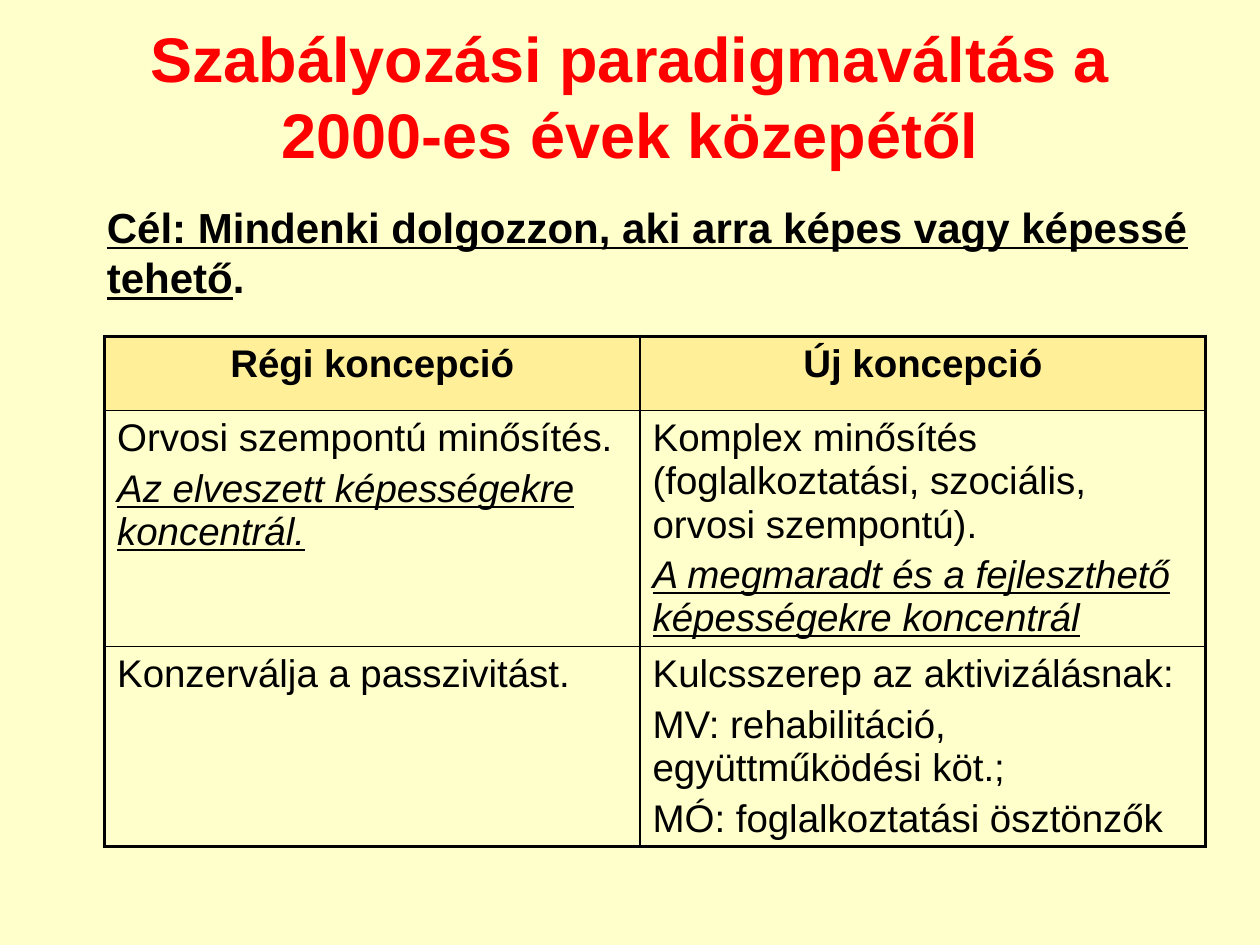
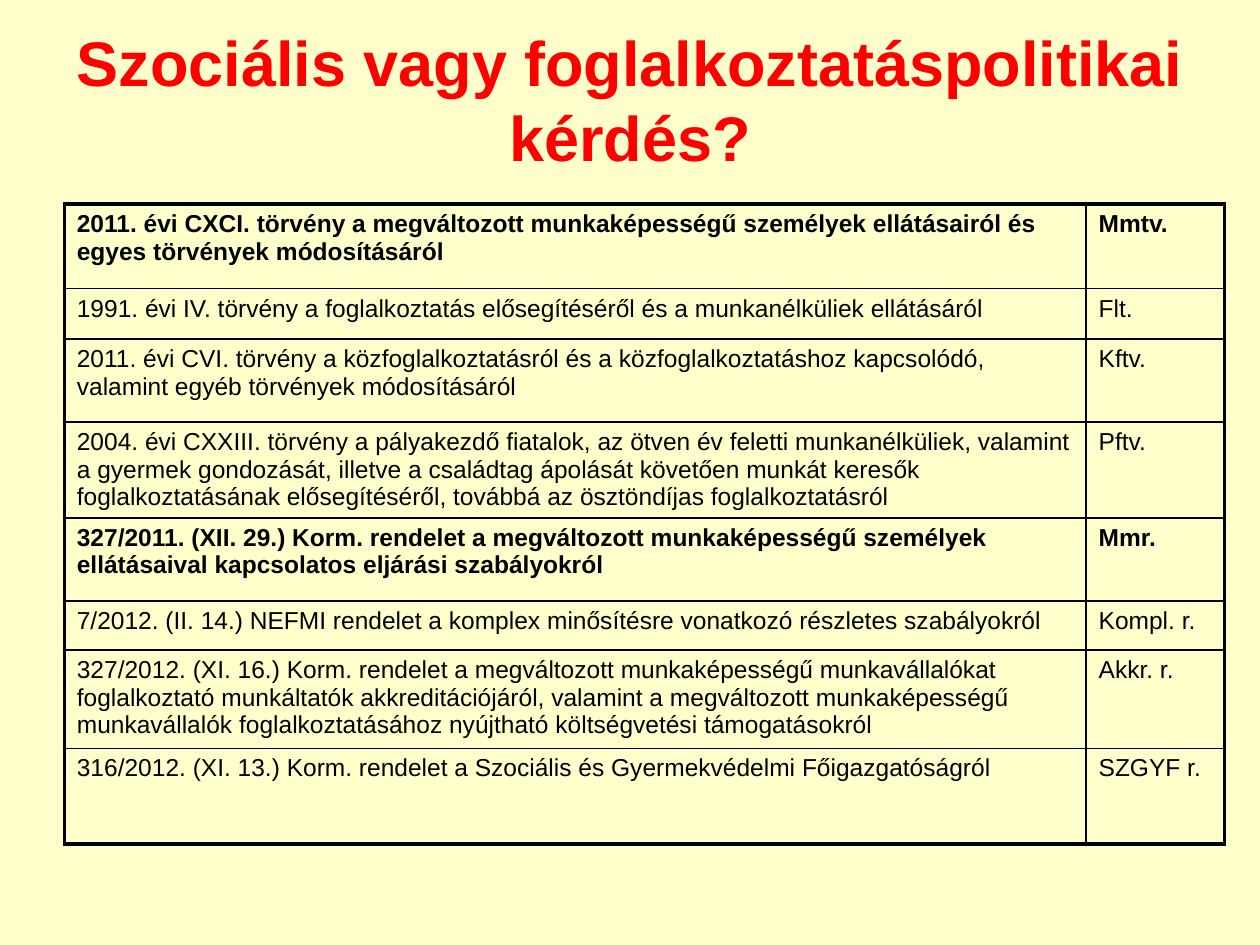
from dataclasses import dataclass

import lxml.etree
import pptx
import pptx.dml.color
import pptx.enum.text
import pptx.oxml.ns
import pptx.util

Inches = pptx.util.Inches
Pt = pptx.util.Pt
PP_ALIGN = pptx.enum.text.PP_ALIGN


@dataclass(frozen=True)
class Theme:
    font: str = "Arial"
    background: str = "FFFFCC"
    title: str = "FF0000"
    ink: str = "000000"
    header: str = "FFC000"
    header_alpha: int = 25
    title_size: int = 36
    goal_size: int = 24
    concept_size: int = 22
    law_size: int = 14
    outer_line: float = 2.25
    inner_line: float = 1


THEME = Theme()

CONCEPTS = [
    [["Régi koncepció"], ["Új koncepció"]],
    [
        ["Orvosi szempontú minősítés.", "Az elveszett képességekre koncentrál."],
        [
            "Komplex minősítés (foglalkoztatási, szociális, orvosi szempontú).",
            "A megmaradt és a fejleszthető képességekre koncentrál",
        ],
    ],
    [
        ["Konzerválja a passzivitást."],
        [
            "Kulcsszerep az aktivizálásnak:",
            "MV: rehabilitáció, együttműködési köt.;",
            "MÓ: foglalkoztatási ösztönzők",
        ],
    ],
]

LAWS = [
    ("2011. évi CXCI. törvény a megváltozott munkaképességű személyek ellátásairól "
     "és egyes törvények módosításáról", "Mmtv.", 0.67),
    ("1991. évi IV. törvény a foglalkoztatás elősegítéséről és a munkanélküliek "
     "ellátásáról", "Flt.", 0.4),
    ("2011. évi CVI. törvény a közfoglalkoztatásról és a közfoglalkoztatáshoz "
     "kapcsolódó, valamint egyéb törvények módosításáról", "Kftv.", 0.66),
    ("2004. évi CXXIII. törvény a pályakezdő fiatalok, az ötven év feletti "
     "munkanélküliek, valamint a gyermek gondozását, illetve a családtag ápolását "
     "követően munkát keresők foglalkoztatásának elősegítéséről, továbbá az "
     "ösztöndíjas foglalkoztatásról", "Pftv.", 0.76),
    ("327/2011. (XII. 29.) Korm. rendelet a megváltozott munkaképességű személyek "
     "ellátásaival kapcsolatos eljárási szabályokról", "Mmr.", 0.66),
    ("7/2012. (II. 14.) NEFMI rendelet a komplex minősítésre vonatkozó részletes "
     "szabályokról", "Kompl. r.", 0.39),
    ("327/2012. (XI. 16.) Korm. rendelet a megváltozott munkaképességű "
     "munkavállalókat foglalkoztató munkáltatók akkreditációjáról, valamint a "
     "megváltozott munkaképességű munkavállalók foglalkoztatásához nyújtható "
     "költségvetési támogatásokról", "Akkr. r.", 0.78),
    ("316/2012. (XI. 13.) Korm. rendelet a Szociális és Gyermekvédelmi "
     "Főigazgatóságról", "SZGYF r.", 0.76),
]
KEY_LAWS = {"Mmtv.", "Mmr."}


def add_run(paragraph, text, size, color=THEME.ink, bold=False, italic=False, underline=False):
    run = paragraph.add_run()
    run.text = text
    font = run.font
    font.name = THEME.font
    font.size = Pt(size)
    font.bold = bold
    font.italic = italic
    font.underline = underline
    font.color.rgb = pptx.dml.color.RGBColor.from_string(color)


def add_titled_slide(prs, heading, box):
    slide = prs.slides.add_slide(prs.slide_layouts.get_by_name("Title Only"))
    title = slide.shapes.title
    title.left, title.top, title.width, title.height = map(Inches, box)
    frame = title.text_frame
    frame.word_wrap = True
    frame.auto_size = pptx.enum.text.MSO_AUTO_SIZE.NONE
    frame.vertical_anchor = pptx.enum.text.MSO_ANCHOR.MIDDLE
    paragraph = frame.paragraphs[0]
    paragraph.alignment = PP_ALIGN.CENTER
    add_run(paragraph, heading, THEME.title_size, THEME.title, bold=True)
    return slide


def add_goal(slide, box):
    frame = slide.shapes.add_textbox(*map(Inches, box)).text_frame
    frame.word_wrap = True
    paragraph = frame.paragraphs[0]
    add_run(paragraph, "Cél: Mindenki dolgozzon, aki arra képes vagy képessé tehető",
            THEME.goal_size, bold=True, underline=True)
    add_run(paragraph, ".", THEME.goal_size, bold=True)


def draw_border(cell, side, width):
    qn = pptx.oxml.ns.qn
    line = lxml.etree.SubElement(cell._tc.get_or_add_tcPr(), qn(f"a:ln{side}"), w=str(Pt(width)))
    fill = lxml.etree.SubElement(line, qn("a:solidFill"))
    lxml.etree.SubElement(fill, qn("a:srgbClr"), val=THEME.ink)


def add_ruled_table(slide, left, top, widths, heights):
    table = slide.shapes.add_table(
        len(heights), len(widths), Inches(left), Inches(top),
        Inches(sum(widths)), Inches(sum(heights))).table
    table.first_row = table.horz_banding = False
    for column, width in zip(table.columns, widths):
        column.width = Inches(width)
    for r, height in enumerate(heights):
        table.rows[r].height = Inches(height)
        for c in range(len(widths)):
            cell = table.cell(r, c)
            outer_sides = {"L": c == 0, "R": c == len(widths) - 1,
                           "T": r == 0, "B": r == len(heights) - 1}
            for side, outer in outer_sides.items():
                draw_border(cell, side, THEME.outer_line if outer else THEME.inner_line)
            cell.fill.background()
    return table


def tint_header(cell):
    cell.fill.solid()
    cell.fill.fore_color.rgb = pptx.dml.color.RGBColor.from_string(THEME.header)
    color = cell._tc.tcPr.find(".//" + pptx.oxml.ns.qn("a:solidFill") + "[last()]/"
                               + pptx.oxml.ns.qn("a:srgbClr") + f"[@val='{THEME.header}']")
    lxml.etree.SubElement(color, pptx.oxml.ns.qn("a:alpha"), val=str(THEME.header_alpha * 1000))


def add_concepts(slide, left, top):
    table = add_ruled_table(slide, left, top, [4.25, 4.49], [0.59, 1.87, 1.59])
    for r, row in enumerate(CONCEPTS):
        for c, statements in enumerate(row):
            cell = table.cell(r, c)
            header = r == 0
            if header:
                tint_header(cell)
            for i, statement in enumerate(statements):
                frame = cell.text_frame
                paragraph = frame.add_paragraph() if i else frame.paragraphs[0]
                paragraph.alignment = PP_ALIGN.CENTER if header else PP_ALIGN.LEFT
                paragraph.space_before = Pt(0.2 * THEME.concept_size if i else 0)
                focus = r == 1 and i == 1
                add_run(paragraph, statement, THEME.concept_size,
                        bold=header, italic=focus, underline=focus)


def add_laws(slide, left, top):
    table = add_ruled_table(slide, left, top, [8.11, 1.1], [height for _, _, height in LAWS])
    for r, (law, short_name, _) in enumerate(LAWS):
        for c, text in enumerate((law, short_name)):
            add_run(table.cell(r, c).text_frame.paragraphs[0], text,
                    THEME.law_size, bold=short_name in KEY_LAWS)


def build_paradigm_slide(prs):
    slide = add_titled_slide(prs, "Szabályozási paradigmaváltás a 2000-es évek közepétől",
                             (0.5, 0.13, 9, 1.25))
    add_concepts(slide, 0.83, 2.67)
    add_goal(slide, (0.75, 1.55, 8.92, 0.91))


def build_law_slide(prs):
    slide = add_titled_slide(prs, "Szociális vagy foglalkoztatáspolitikai kérdés?",
                             (0.5, 0.44, 9, 0.69))
    add_laws(slide, 0.51, 1.62)


def main():
    prs = pptx.Presentation()
    prs.slide_width, prs.slide_height = Inches(10), Inches(7.5)
    backdrop = prs.slide_master.background.fill
    backdrop.solid()
    backdrop.fore_color.rgb = pptx.dml.color.RGBColor.from_string(THEME.background)
    build_paradigm_slide(prs)
    build_law_slide(prs)
    prs.save("out.pptx")


if __name__ == "__main__":
    main()
